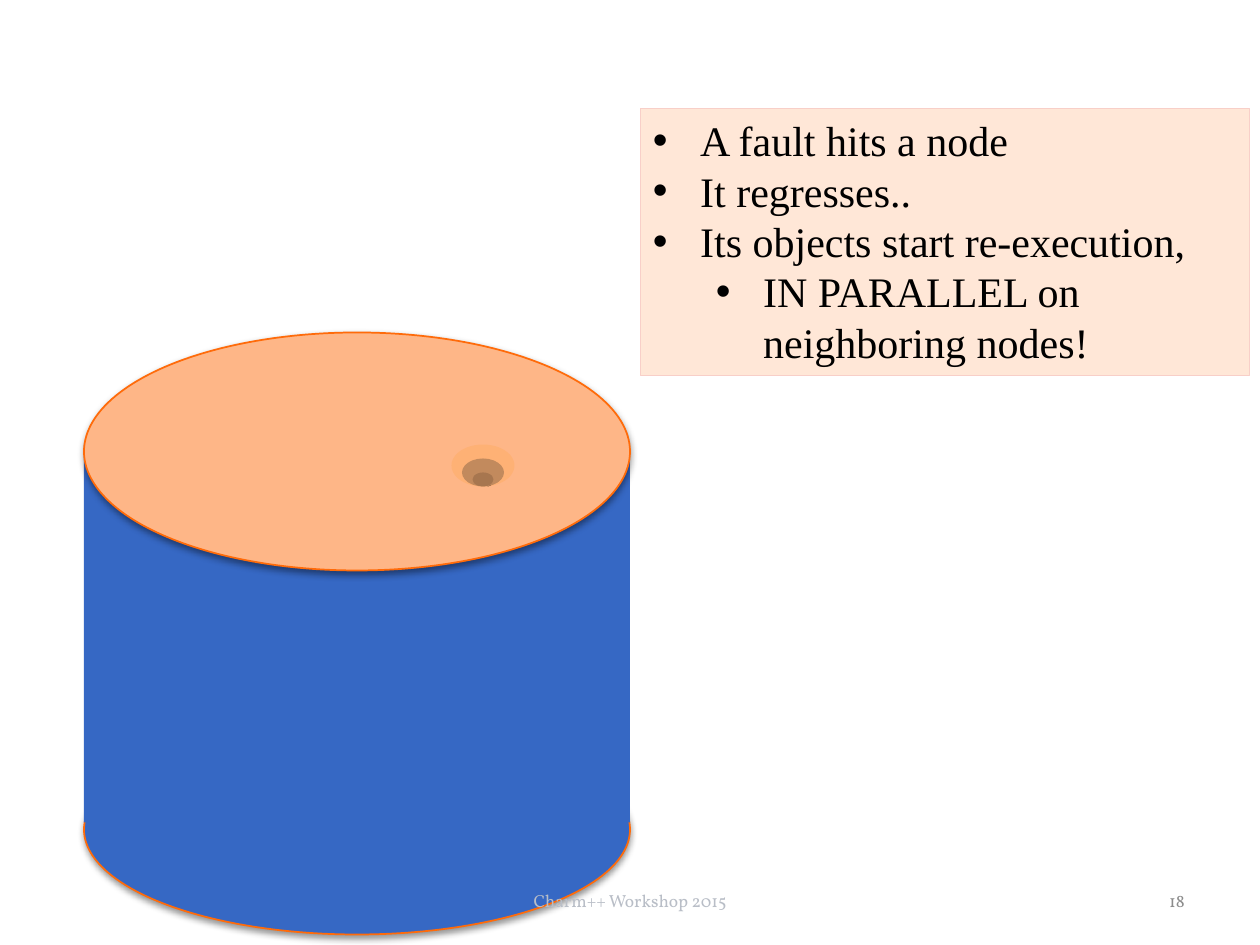
from dataclasses import dataclass

import lxml.etree
import pptx
import pptx.dml.color
import pptx.enum.shapes
import pptx.enum.text
import pptx.oxml.ns
import pptx.util

Pt = pptx.util.Pt
SHAPE = pptx.enum.shapes.MSO_SHAPE
ALIGN = pptx.enum.text.PP_ALIGN
ANCHOR = pptx.enum.text.MSO_ANCHOR

COLORS = {
    "side": "3668C4",
    "top": "FEB687",
    "rim": "FF6B0A",
    "hollow": "FEB175",
    "pit": "C28A5D",
    "pit_floor": "A7764F",
    "pit_core": "755337",
    "note": "FFE7D7",
    "note_edge": "F8CFC8",
    "text": "000000",
    "number": "8C8C8C",
    "footer": "B9BEC7",
    "shadow": "000000",
}


@dataclass
class Area:
    left: float
    top: float
    width: float
    height: float

    def lengths(self) -> list:
        return [Pt(value) for value in (self.left, self.top, self.width, self.height)]


@dataclass
class Solid:
    kind: int
    area: Area
    fill: str
    line: str = ""
    line_width: float = 1
    shadow: bool = False


@dataclass
class Label:
    text: str
    area: Area
    align: int
    color: str


@dataclass
class Bullet:
    text: str
    level: int = 0


CYLINDER = [
    Solid(SHAPE.OVAL, Area(48, 414, 312, 120), "side", "rim", shadow=True),
    Solid(SHAPE.RECTANGLE, Area(48, 254, 312, 216), "side"),
]
SURFACE = [
    Solid(SHAPE.OVAL, Area(48, 190, 312, 136), "top", "rim", shadow=True),
    Solid(SHAPE.OVAL, Area(258, 254, 36, 24), "hollow"),
    Solid(SHAPE.OVAL, Area(276, 270, 6, 8), "pit_core"),
    Solid(SHAPE.OVAL, Area(264, 262, 24, 16), "pit"),
    Solid(SHAPE.OVAL, Area(270, 270, 12, 8), "pit_floor"),
]
NOTE = Solid(SHAPE.RECTANGLE, Area(366, 62, 348, 152.5), "note", "note_edge", 0.75)
BULLETS = [
    Bullet("A fault hits a node"),
    Bullet("It regresses.."),
    Bullet("Its objects start re-execution,"),
    Bullet("IN PARALLEL on neighboring nodes!", 1),
]
NUMBER = Label("18", Area(516, 500.5, 168, 28.75), ALIGN.RIGHT, "number")
FOOTER = Label("Charm++ Workshop 2015", Area(246, 500.5, 228, 28.75), ALIGN.CENTER, "footer")


def rgb(name: str) -> pptx.dml.color.RGBColor:
    return pptx.dml.color.RGBColor.from_string(COLORS[name])


def apply_format(target, values: dict) -> None:
    for name, value in values.items():
        setattr(target, name, value)


def add_element(parent, tag: str, **attributes: str):
    return lxml.etree.SubElement(parent, pptx.oxml.ns.qn(tag), attributes)


def add_run(para, text: str, font: str, size: float, color: str) -> None:
    span = para.add_run()
    span.text = text
    apply_format(span.font, {"name": font, "size": Pt(size)})
    span.font.color.rgb = rgb(color)


def add_shadow(shape) -> None:
    effects = shape._element.spPr.find(pptx.oxml.ns.qn("a:effectLst"))
    shadow = add_element(
        effects, "a:outerShdw", blurRad=str(Pt(4)), dist=str(Pt(1.6)),
        dir="5400000", rotWithShape="0",
    )
    color = add_element(shadow, "a:srgbClr", val=COLORS["shadow"])
    add_element(color, "a:alpha", val="42000")


def draw_solid(slide, solid: Solid):
    shape = slide.shapes.add_shape(solid.kind, *solid.area.lengths())
    shape.shadow.inherit = False
    shape.fill.solid()
    shape.fill.fore_color.rgb = rgb(solid.fill)
    if solid.line:
        shape.line.color.rgb = rgb(solid.line)
        shape.line.width = Pt(solid.line_width)
    else:
        shape.line.fill.background()
    if solid.shadow:
        add_shadow(shape)
    return shape


def draw_label(slide, label: Label) -> None:
    box = slide.shapes.add_textbox(*label.area.lengths())
    apply_format(box.text_frame, {"word_wrap": True, "vertical_anchor": ANCHOR.MIDDLE})
    para = box.text_frame.paragraphs[0]
    para.alignment = label.align
    add_run(para, label.text, "Vollkorn", 10, label.color)


def draw_note(slide, solid: Solid, bullets: list[Bullet]) -> None:
    frame = draw_solid(slide, solid).text_frame
    apply_format(frame, {
        "word_wrap": True,
        "vertical_anchor": ANCHOR.TOP,
        "auto_size": pptx.enum.text.MSO_AUTO_SIZE.SHAPE_TO_FIT_TEXT,
    })
    for index, bullet in enumerate(bullets):
        para = frame.add_paragraph() if index else frame.paragraphs[0]
        apply_format(para, {"alignment": ALIGN.LEFT, "level": bullet.level})
        properties = para._p.get_or_add_pPr()
        properties.set("marL", str(Pt(27 + 36 * bullet.level)))
        properties.set("indent", str(-Pt(27)))
        add_element(properties, "a:buFont", typeface="Arial")
        add_element(properties, "a:buChar", char="•")
        add_run(para, bullet.text, "Times New Roman", 24, "text")


def main() -> None:
    deck = pptx.Presentation()
    apply_format(deck, {"slide_width": Pt(720), "slide_height": Pt(540)})
    slide = deck.slides.add_slide(deck.slide_layouts[6])
    for solid in CYLINDER:
        draw_solid(slide, solid)
    draw_label(slide, NUMBER)
    for solid in SURFACE:
        draw_solid(slide, solid)
    draw_note(slide, NOTE, BULLETS)
    draw_label(slide, FOOTER)
    deck.save("out.pptx")


if __name__ == "__main__":
    main()
